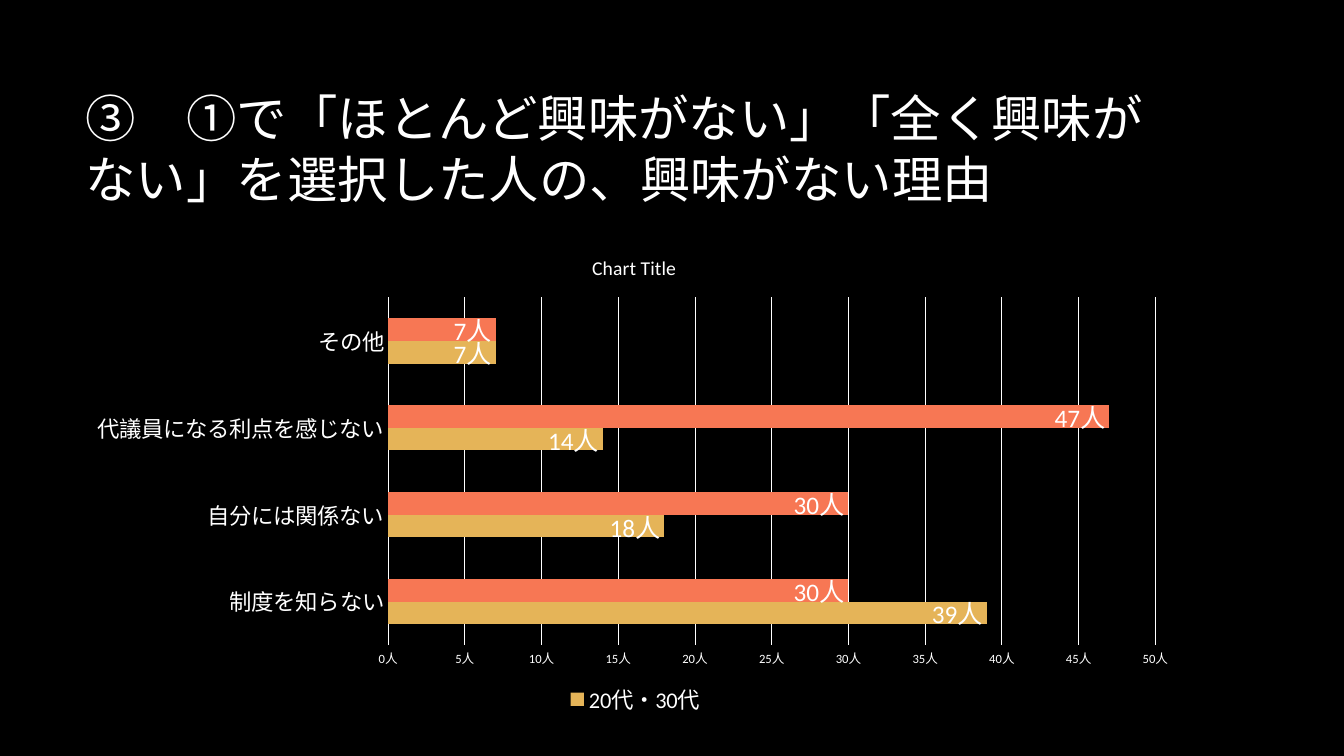
from dataclasses import dataclass

from pptx import Presentation
from pptx.chart.chart import Chart
from pptx.chart.data import CategoryChartData
from pptx.dml.color import RGBColor
from pptx.enum.chart import XL_CHART_TYPE as ChartType
from pptx.enum.chart import XL_LABEL_POSITION as LabelPosition
from pptx.enum.chart import XL_LEGEND_POSITION as LegendPosition
from pptx.enum.chart import XL_TICK_MARK as TickMark
from pptx.enum.text import MSO_ANCHOR as Anchor
from pptx.oxml import parse_xml
from pptx.oxml.ns import nsdecls
from pptx.slide import Slide
from pptx.text.text import Font
from pptx.util import Inches, Pt

WHITE = "FFFFFF"
FONT_NAME = "Calibri"
PEOPLE_FORMAT = '0"人"'
HEADING = "③\u3000①で「ほとんど興味がない」「全く興味がない」を選択した人の、興味がない理由".replace("\u3000", "　")
REASONS = ["制度を知らない", "自分には関係ない", "代議員になる利点を感じない", "その他"]


@dataclass(frozen=True)
class Box:
    left: float
    top: float
    width: float
    height: float

    def lengths(self) -> list[Inches]:
        return [Inches(n) for n in (self.left, self.top, self.width, self.height)]


@dataclass(frozen=True)
class AgeGroup:
    name: str
    votes: tuple[int, ...]
    fill: str


HEADING_BOX = Box(0.75, 0.67, 11.08, 1.59)
CHART_BOX = Box(0.75, 2.34, 11.08, 4.84)
PLOT_BOX = Box(3.85, 2.95, 7.61, 3.45)
LEGEND_BOX = Box(5.05, 6.78, 2.5, 0.34)
AGE_GROUPS = [
    AgeGroup("20代・30代", (39, 18, 14, 7), "E5B458"),
    AgeGroup("40代以上", (30, 30, 47, 7), "F77754"),
]


def color(value: str) -> RGBColor:
    return RGBColor.from_string(value)


def style_font(font: Font, size: float) -> None:
    font.name = FONT_NAME
    font.size = Pt(size)
    font.bold = False
    font.color.rgb = color(WHITE)


def manual_layout(box: Box, target: str = ""):
    """Turn a box on the slide into a layout in fractions of the chart."""
    x = (box.left - CHART_BOX.left) / CHART_BOX.width
    y = (box.top - CHART_BOX.top) / CHART_BOX.height
    width = box.width / CHART_BOX.width
    height = box.height / CHART_BOX.height
    return parse_xml(
        f'<c:layout {nsdecls("c")}><c:manualLayout>{target}'
        '<c:xMode val="edge"/><c:yMode val="edge"/>'
        f'<c:x val="{x:.4f}"/><c:y val="{y:.4f}"/>'
        f'<c:w val="{width:.4f}"/><c:h val="{height:.4f}"/>'
        "</c:manualLayout></c:layout>"
    )


def add_heading(slide: Slide) -> None:
    frame = slide.shapes.add_textbox(*HEADING_BOX.lengths()).text_frame
    frame.word_wrap = True
    frame.vertical_anchor = Anchor.MIDDLE
    paragraph = frame.paragraphs[0]
    paragraph.line_spacing = Pt(43.5)
    run = paragraph.add_run()
    run.text = HEADING
    style_font(run.font, 36)


def style_axes(chart: Chart) -> None:
    for axis, size in ((chart.category_axis, 16), (chart.value_axis, 9)):
        axis.major_tick_mark = axis.minor_tick_mark = TickMark.NONE
        style_font(axis.tick_labels.font, size)

    counts = chart.value_axis
    counts.minimum_scale, counts.maximum_scale, counts.major_unit = 0, 50, 5
    counts.tick_labels.number_format = PEOPLE_FORMAT
    counts.tick_labels.number_format_is_linked = False
    counts.format.line.fill.background()
    counts.has_major_gridlines = True
    for line in (chart.category_axis.format.line, counts.major_gridlines.format.line):
        line.color.rgb = color(WHITE)
        line.width = Pt(0.75)


def style_bars(chart: Chart) -> None:
    plot = chart.plots[0]
    plot.gap_width = 182
    plot.vary_by_categories = False
    for series, group in zip(plot.series, AGE_GROUPS):
        series.format.fill.solid()
        series.format.fill.fore_color.rgb = color(group.fill)
        labels = series.data_labels
        labels.show_value = True
        labels.position = LabelPosition.INSIDE_END
        labels.number_format = PEOPLE_FORMAT
        labels.number_format_is_linked = False
        style_font(labels.font, 18)


def place_parts(chart: Chart) -> None:
    """Fix the plot and legend areas, and list only the older group."""
    plot_area = chart.element.xpath(".//c:plotArea")[0]
    legend = chart.element.xpath(".//c:legend")[0]
    for parent in (plot_area, legend):
        for layout in parent.xpath("./c:layout"):
            parent.remove(layout)
    plot_area.insert(0, manual_layout(PLOT_BOX, '<c:layoutTarget val="inner"/>'))
    entry = parse_xml(
        f'<c:legendEntry {nsdecls("c")}><c:idx val="0"/><c:delete val="1"/></c:legendEntry>'
    )
    legend.xpath("./c:legendPos")[0].addnext(entry)
    entry.addnext(manual_layout(LEGEND_BOX))


def add_reasons_chart(slide: Slide) -> None:
    data = CategoryChartData(number_format=PEOPLE_FORMAT)
    data.categories = REASONS
    for group in AGE_GROUPS:
        data.add_series(group.name, group.votes)
    chart = slide.shapes.add_chart(
        ChartType.BAR_CLUSTERED, *CHART_BOX.lengths(), data
    ).chart
    style_font(chart.font, 10)

    chart.has_title = True
    run = chart.chart_title.text_frame.paragraphs[0].add_run()
    run.text = "Chart Title"
    style_font(run.font, 14)

    chart.has_legend = True
    chart.legend.position = LegendPosition.BOTTOM
    chart.legend.include_in_layout = False
    style_font(chart.legend.font, 16)

    style_axes(chart)
    style_bars(chart)
    place_parts(chart)


def main() -> None:
    presentation = Presentation()
    presentation.slide_width = Inches(13.33)
    presentation.slide_height = Inches(7.5)
    slide = presentation.slides.add_slide(presentation.slide_layouts[6])
    slide.background.fill.solid()
    slide.background.fill.fore_color.rgb = color("000000")
    add_heading(slide)
    add_reasons_chart(slide)
    presentation.save("out.pptx")


if __name__ == "__main__":
    main()
